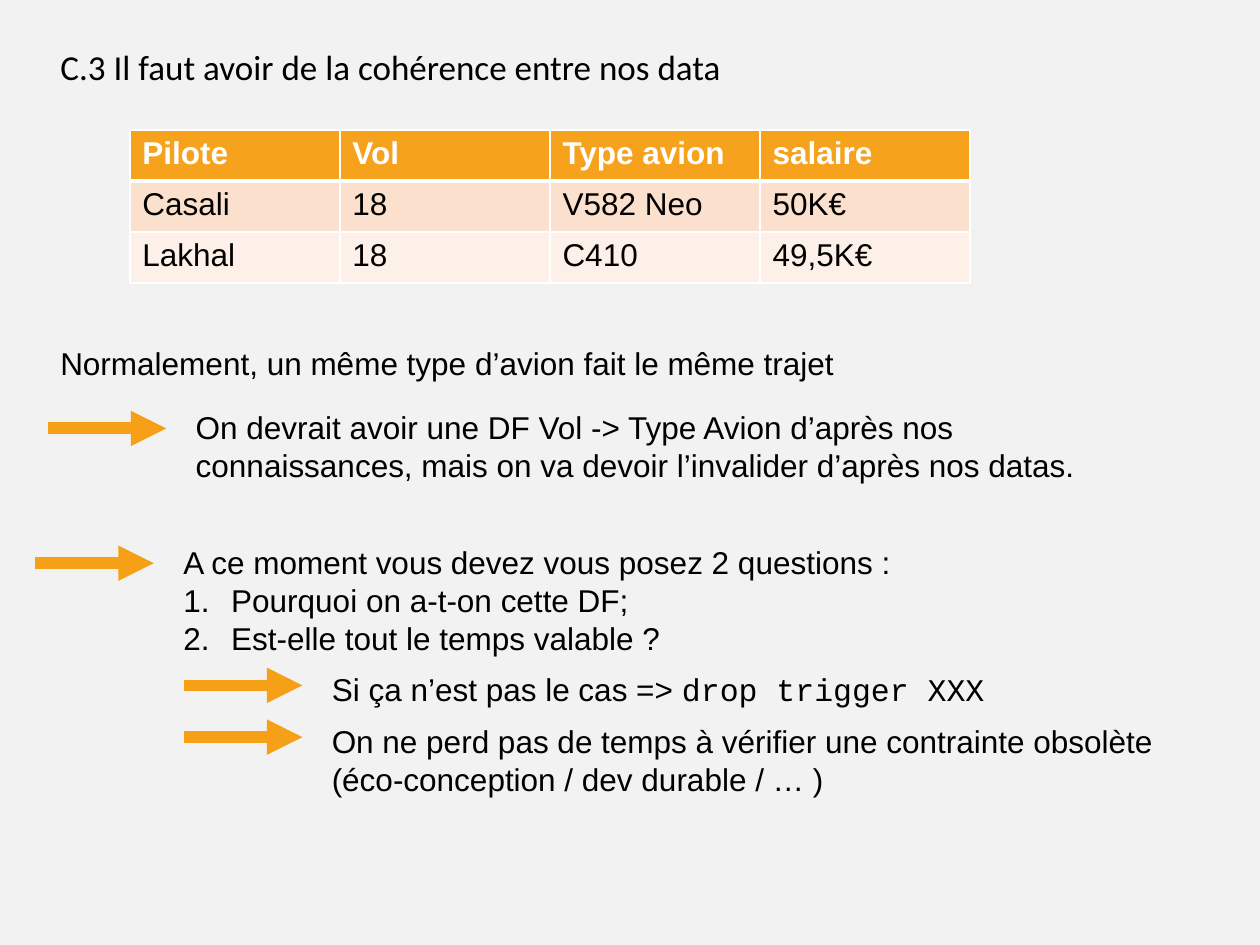
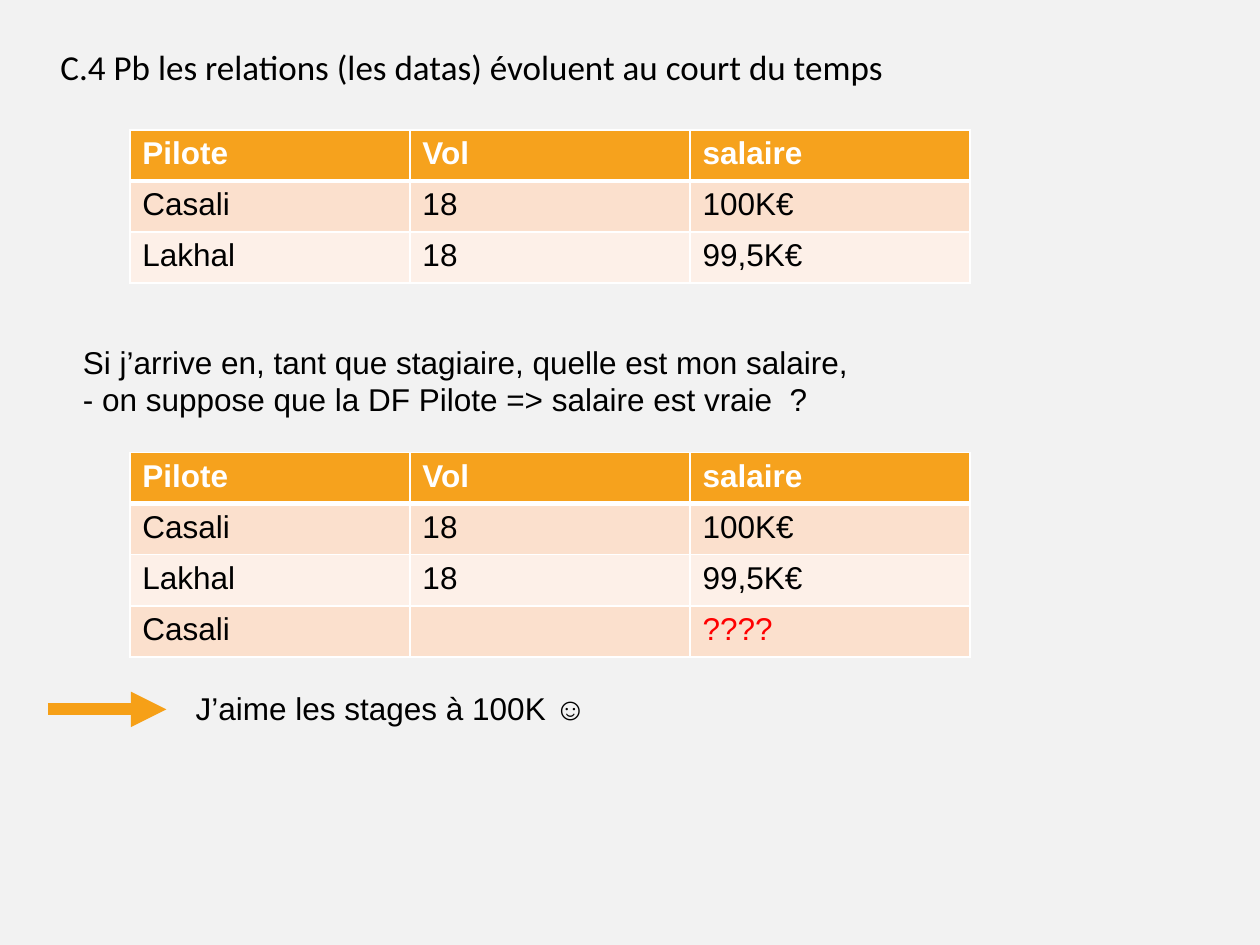
from lxml import etree
from pptx import Presentation
from pptx.dml.color import RGBColor
from pptx.enum.shapes import MSO_CONNECTOR
from pptx.enum.text import MSO_ANCHOR, MSO_AUTO_SIZE, PP_ALIGN
from pptx.oxml.ns import qn
from pptx.util import Inches, Pt

COLORS = {
    "background": "F2F2F2", "text": "000000", "header": "F6A21D",
    "odd_row": "FBE0CD", "even_row": "FDF0E8", "border": "FFFFFF",
    "arrow": "F6A017", "unknown": "FF0000",
}
MARGIN = 0.38
TITLE_BOX = (MARGIN, 0.31, 7.16, 0.44)
TABLE_LEFT, TABLE_WIDTH, ROW_HEIGHT = 1.03, 6.67, 0.406
ARROW_LENGTH, ARROW_TO_TEXT = 0.94, 1.075
ARROW_DROP = {"main": 0.21, "nested": 0.17}
NUMBER_INDENT = 0.38
TITLE_ONLY, TITLE_AND_BODY = 5, 1
UNKNOWN = "????"

SALARIES = [
    ("Pilote", "Vol", "salaire"),
    ("Casali", "18", "100K€"),
    ("Lakhal", "18", "99,5K€"),
]

# Paragraphs are lists of (text, font) runs; steps are (level, left, top, width, height, paragraphs).
SLIDES = [
    {
        "title": "C.3 Il faut avoir de la cohérence entre nos data",
        "tables": [(1.03, [
            ("Pilote", "Vol", "Type avion", "salaire"),
            ("Casali", "18", "V582 Neo", "50K€"),
            ("Lakhal", "18", "C410", "49,5K€"),
        ])],
        "remark": ((MARGIN, 2.68, 8.95, 0.4), [
            [("Normalement, un même type d’avion fait le même trajet", "Arial")],
        ]),
        "questions": (0.28, 4.26, 7.29, 1.01, [
            "A ce moment vous devez vous posez 2 questions :",
            "Pourquoi on a-t-on cette DF;",
            "Est-elle tout le temps valable ?",
        ]),
        "steps": [
            ("main", MARGIN, 3.19, 7.29, 0.71, [
                [("On devrait avoir une DF Vol -> Type Avion d’après nos connaissances, "
                  "mais on va devoir l’invalider d’après nos datas.", "Arial")],
            ]),
            ("nested", 1.46, 5.27, 6.02, 0.4, [
                [("Si ça n’est pas le cas => ", "Arial"), ("drop trigger XXX", "Courier New")],
            ]),
            ("nested", 1.46, 5.68, 6.8, 0.71, [
                [("On ne perd pas de temps à vérifier une contrainte obsolète "
                  "(éco-conception / dev durable / … )", "Arial")],
            ]),
        ],
    },
    {
        "title": "C.4 Pb les relations (les datas) évoluent au court du temps",
        "tables": [(1.03, SALARIES), (3.59, SALARIES + [("Casali", "", UNKNOWN)])],
        "remark": ((0.56, 2.67, 7.49, 0.71), [
            [("Si j’arrive en, tant que stagiaire, quelle est mon salaire,", "Arial")],
            [("- on suppose que la DF Pilote => salaire est vraie  ?", "Arial")],
        ]),
        "steps": [
            ("main", MARGIN, 5.42, 7.29, 0.4, [[("J’aime les stages à 100K ☺", "Arial")]]),
        ],
    },
]


def rgb(name):
    return RGBColor.from_string(COLORS[name])


def add_run(paragraph, text, font="Arial", size=18, color="text", bold=False):
    run = paragraph.add_run()
    run.text = text
    run.font.name, run.font.size, run.font.bold = font, Pt(size), bold
    run.font.color.rgb = rgb(color)


def place(shape, box):
    shape.left, shape.top, shape.width, shape.height = map(Inches, box)


def write(shape, paragraphs, size=18):
    """Fill a text box or placeholder with left-aligned paragraphs of runs."""
    frame = shape.text_frame
    frame.word_wrap = True
    frame.auto_size = MSO_AUTO_SIZE.NONE
    frame.vertical_anchor = MSO_ANCHOR.TOP
    for index, runs in enumerate(paragraphs):
        paragraph = frame.paragraphs[0] if index == 0 else frame.add_paragraph()
        paragraph.alignment = PP_ALIGN.LEFT
        paragraph.space_before = Pt(0)
        for text, font in runs:
            add_run(paragraph, text, font, size)


def add_text(slide, box, paragraphs):
    write(slide.shapes.add_textbox(*map(Inches, box)), paragraphs)


def add_arrow(slide, left, y):
    arrow = slide.shapes.add_connector(
        MSO_CONNECTOR.STRAIGHT, Inches(left), Inches(y), Inches(left + ARROW_LENGTH), Inches(y))
    arrow.line.color.rgb = rgb("arrow")
    arrow.line.width = Pt(6.75)
    etree.SubElement(arrow.line._get_or_add_ln(), qn("a:tailEnd"), type="triangle")
    etree.SubElement(arrow._element.spPr, qn("a:effectLst"))


def add_step(slide, level, left, top, width, height, paragraphs):
    add_arrow(slide, left, top + ARROW_DROP[level])
    add_text(slide, (left + ARROW_TO_TEXT, top, width, height), paragraphs)


def add_questions(slide, left, top, width, height, lines):
    """Write an unnumbered lead line followed by numbered questions in the body."""
    add_arrow(slide, left, top + ARROW_DROP["main"])
    body = slide.placeholders[1]
    place(body, (left + ARROW_TO_TEXT, top, width, height))
    write(body, [[(line, "Arial")] for line in lines])
    for index, paragraph in enumerate(body.text_frame.paragraphs):
        indent = Inches(NUMBER_INDENT) if index else 0
        properties = paragraph._p.get_or_add_pPr()
        properties.set("marL", str(indent))
        properties.set("indent", str(-indent))
        if index:
            etree.SubElement(properties, qn("a:buFont"), typeface="Arial")
            etree.SubElement(properties, qn("a:buAutoNum"), type="arabicPeriod")
        else:
            etree.SubElement(properties, qn("a:buNone"))


def add_borders(cell, row):
    """Thin white borders, with a thick rule between the header and the rows."""
    properties = cell._tc.get_or_add_tcPr()
    thick_side = {0: "lnB", 1: "lnT"}.get(row)
    for side in ("lnL", "lnR", "lnT", "lnB"):
        width = Pt(3 if side == thick_side else 1)
        line = etree.SubElement(properties, qn(f"a:{side}"), w=str(width))
        fill = etree.SubElement(line, qn("a:solidFill"))
        etree.SubElement(fill, qn("a:srgbClr"), val=COLORS["border"])


def add_data_table(slide, top, rows):
    columns = len(rows[0])
    table = slide.shapes.add_table(
        len(rows), columns, Inches(TABLE_LEFT), Inches(top),
        Inches(TABLE_WIDTH), Inches(ROW_HEIGHT * len(rows))).table
    for column in table.columns:
        column.width = Inches(TABLE_WIDTH / columns)
    for r, values in enumerate(rows):
        fill = "header" if r == 0 else "odd_row" if r % 2 else "even_row"
        for c, value in enumerate(values):
            cell = table.cell(r, c)
            add_borders(cell, r)
            cell.fill.solid()
            cell.fill.fore_color.rgb = rgb(fill)
            color = "border" if r == 0 else "unknown" if value == UNKNOWN else "text"
            if value:
                add_run(cell.text_frame.paragraphs[0], value, color=color, bold=r == 0)


def build_slide(prs, content):
    layout = TITLE_AND_BODY if "questions" in content else TITLE_ONLY
    slide = prs.slides.add_slide(prs.slide_layouts[layout])
    place(slide.shapes.title, TITLE_BOX)
    write(slide.shapes.title, [[(content["title"], "Calibri")]], size=20)
    for top, rows in content["tables"]:
        add_data_table(slide, top, rows)
    add_text(slide, *content["remark"])
    if "questions" in content:
        add_questions(slide, *content["questions"])
    for step in content["steps"]:
        add_step(slide, *step)


def main():
    prs = Presentation()
    prs.slide_width, prs.slide_height = Inches(10), Inches(7.5)
    background = prs.slide_master.background.fill
    background.solid()
    background.fore_color.rgb = rgb("background")
    for content in SLIDES:
        build_slide(prs, content)
    prs.save("out.pptx")


if __name__ == "__main__":
    main()
